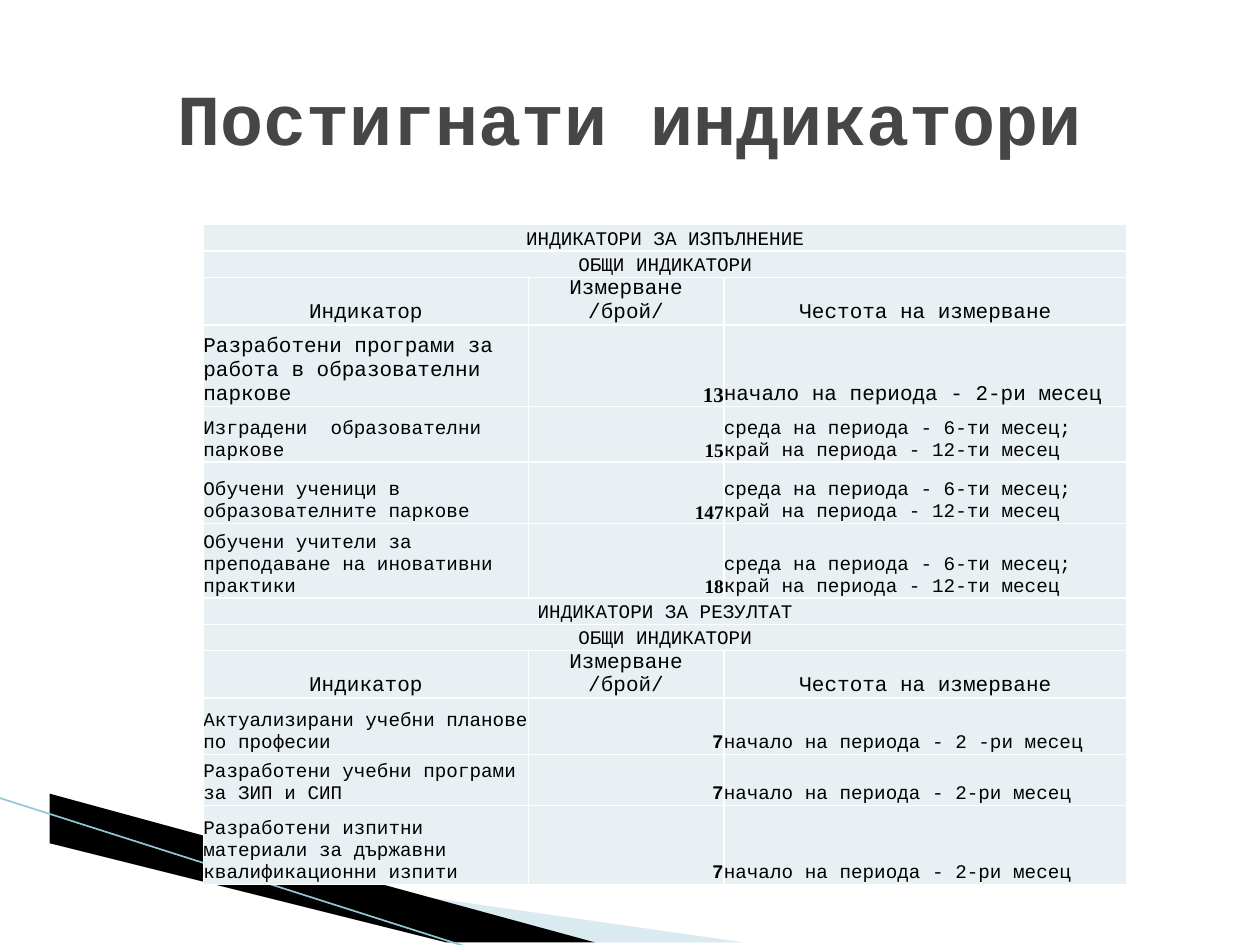
from dataclasses import dataclass

from lxml.etree import SubElement
from pptx import Presentation
from pptx.dml.color import RGBColor
from pptx.enum.shapes import MSO_CONNECTOR
from pptx.enum.text import MSO_ANCHOR, PP_ALIGN
from pptx.oxml.ns import qn
from pptx.util import Cm, Pt


@dataclass(frozen=True)
class Theme:
    ink: str = "000000"
    head: str = "464646"
    cell: str = "E8F0F4"
    edge: str = "FFFFFF"
    pale: str = "A0CBDC"
    line: str = "97C5D8"
    mono: str = "Courier New"
    serif: str = "Times New Roman"
    big: int = 41
    mid: int = 12
    small: int = 11


LOOK = Theme()
MID = PP_ALIGN.CENTER
COLS = (6.55, 3.94, 8.13)
HEADS = ("Индикатор", "Измерване /брой/", "Честота на измерване")
TERM = "среда на периода - 6-ти месец; край на периода - 12-ти месец"
START = "начало на периода - 2-ри месец"

# Each group: title, number font, rows of (height, size, cells)
GROUPS = (
    ("ИНДИКАТОРИ ЗА ИЗПЪЛНЕНИЕ", LOOK.serif, (
        (1.65, LOOK.mid, ("Разработени програми за работа в образователни паркове", "13", START)),
        (1.12, LOOK.small, ("Изградени  образователни паркове", "15", TERM)),
        (1.24, LOOK.small, ("Обучени ученици в образователните паркове", "147", TERM)),
        (1.5, LOOK.small, ("Обучени учители за преподаване на иновативни практики", "18", TERM)),
    )),
    ("ИНДИКАТОРИ ЗА РЕЗУЛТАТ", LOOK.mono, (
        (1.14, LOOK.small, ("Актуализирани учебни планове по професии", "7",
                            "начало на периода - 2 -ри месец")),
        (1.02, LOOK.small, ("Разработени учебни програми за ЗИП и СИП", "7", START)),
        (1.6, LOOK.small, ("Разработени изпитни материали за държавни квалификационни изпити",
                           "7", START)),
    )),
)


def tint(fill, code):
    fill.solid()
    fill.fore_color.rgb = RGBColor.from_string(code)


def apply(item, form):
    for key, value in form.items():
        setattr(item, key, value)


def write(frame, text, size, align, font=LOOK.mono, bold=False, color=LOOK.ink):
    par = frame.paragraphs[0]
    par.alignment = align
    run = par.add_run()
    run.text = text
    apply(run.font, {"size": Pt(size), "name": font, "bold": bold})
    run.font.color.rgb = RGBColor.from_string(color)


def title(slide, left, top, width, height):
    shape = slide.shapes.title
    apply(shape, {"left": Cm(left), "top": Cm(top), "width": Cm(width), "height": Cm(height)})
    apply(shape.text_frame, {"word_wrap": True, "vertical_anchor": MSO_ANCHOR.MIDDLE})
    write(shape.text_frame, "Постигнати индикатори", LOOK.big, MID, bold=True, color=LOOK.head)


def wedge(slide, left, top, points, color, alpha=100):
    pen = slide.shapes.build_freeform(*points[0], scale=Cm(1))
    pen.add_line_segments(points[1:], close=True)
    shape = pen.convert_to_shape(Cm(left), Cm(top))
    shape.shadow.inherit = False
    shape.line.fill.background()
    tint(shape.fill, color)
    if alpha < 100:
        tone = shape.fill._xPr.find(qn("a:solidFill"))[0]
        SubElement(tone, qn("a:alpha"), val=str(alpha * 1000))


def decor(slide, left, top):
    wedge(slide, left, top, ((1.4, 0.54), (15.11, 3.08), (11.58, 3.08), (1.4, 0.51)),
          LOOK.pale, 40)
    wedge(slide, left, top, ((1.35, 0.48), (11.61, 3.08), (9.45, 3.1), (1.37, 0.51)), LOOK.ink)
    rule = slide.shapes.add_connector(MSO_CONNECTOR.STRAIGHT, Cm(left - 0.03), Cm(top + 0.08),
                                      Cm(left + 9.45), Cm(top + 3.1))
    rule.line.width = Pt(0.95)
    rule.line.color.rgb = RGBColor.from_string(LOOK.line)
    SubElement(rule._element.spPr, qn("a:effectLst"))


def frame(cell):
    apply(cell, {"margin_left": 0, "margin_right": 0, "margin_top": 0, "margin_bottom": 0,
                 "vertical_anchor": MSO_ANCHOR.BOTTOM})
    props = cell._tc.get_or_add_tcPr()
    for side in ("lnL", "lnR", "lnT", "lnB"):
        line = SubElement(props, qn("a:" + side), w=str(Pt(1)))
        SubElement(SubElement(line, qn("a:solidFill")), qn("a:srgbClr"), val=LOOK.edge)
    tint(cell.fill, LOOK.cell)


def layout():
    rows = []
    for name, font, items in GROUPS:
        rows += [(0.53, LOOK.small, (text,), (MID,), font)
                 for text in (name, "ОБЩИ ИНДИКАТОРИ")]
        rows.append((0.56, LOOK.mid, HEADS, (MID,) * 3, font))
        rows += [(*item, (PP_ALIGN.LEFT, PP_ALIGN.RIGHT, PP_ALIGN.LEFT), font)
                 for item in items]
    return rows


def grid(slide, left, top):
    rows = layout()
    high = sum(row[0] for row in rows)
    table = slide.shapes.add_table(len(rows), len(COLS), Cm(left), Cm(top),
                                   Cm(sum(COLS)), Cm(high)).table
    apply(table, {"first_row": False, "horz_banding": False})
    for col, width in zip(table.columns, COLS):
        col.width = Cm(width)
    for row, (tall, size, texts, sides, font) in zip(table.rows, rows):
        row.height = Cm(tall)
        cells = list(row.cells)
        for cell in cells:
            frame(cell)
        if len(texts) == 1:
            cells[0].merge(cells[-1])
        for cell, text, side in zip(cells, texts, sides):
            count = side == PP_ALIGN.RIGHT
            write(cell.text_frame, text, size, side, font if count else LOOK.mono, count)


def main():
    deck = Presentation()
    apply(deck, {"slide_width": Cm(25.4), "slide_height": Cm(19.05)})
    slide = deck.slides.add_slide(deck.slide_layouts[5])
    decor(slide, 0, 16)
    grid(slide, 4.1, 4.53)
    title(slide, 1.27, 0.76, 22.86, 3.18)
    deck.save("out.pptx")


if __name__ == "__main__":
    main()
